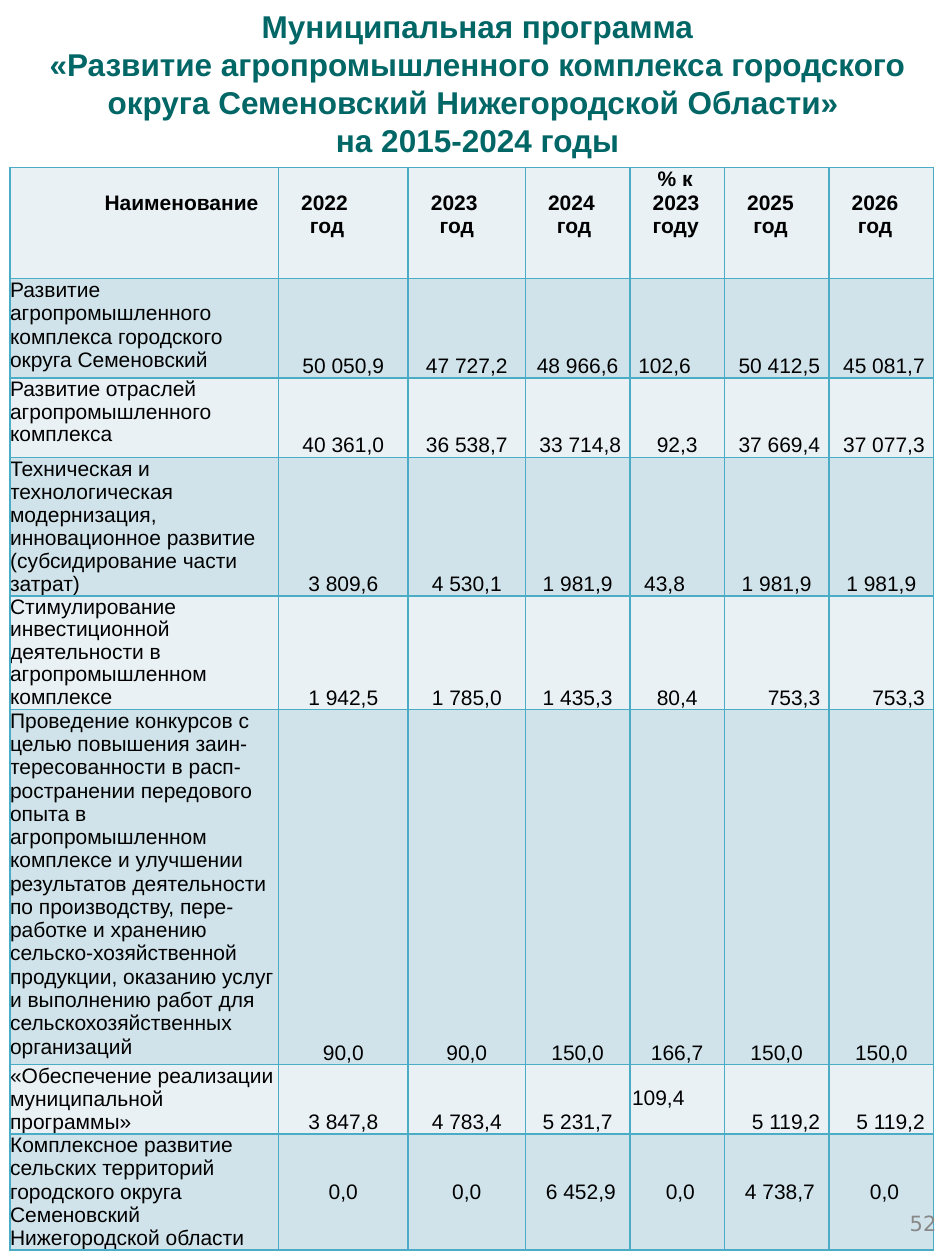
from lxml import etree
from pptx import Presentation
from pptx.dml.color import RGBColor
from pptx.enum.text import MSO_ANCHOR, PP_ALIGN
from pptx.oxml.ns import qn
from pptx.util import Inches, Pt

LEFT, CENTER, RIGHT = PP_ALIGN.LEFT, PP_ALIGN.CENTER, PP_ALIGN.RIGHT
TOP, MIDDLE, BOTTOM = MSO_ANCHOR.TOP, MSO_ANCHOR.MIDDLE, MSO_ANCHOR.BOTTOM

THEME = {
    "title": "006666", "text": "000000", "page": "888888", "border": "4BACC6",
    "light": "E9F1F5", "dark": "D0E3EA",
    "font": "Arial", "page_font": "DejaVu Sans",
    "title_size": 18, "body_size": 12, "border_width": 1,
}

TITLE = [
    ["Муниципальная программа",
     "«Развитие агропромышленного комплекса городского округа Семеновский Нижегородской Области» "],
    ["на 2015-2024 годы"],
]
PAGE_NUMBER = "52"

NAME_HEADING = "Наименование"
GROWTH_HEADING = "% к 2023 году"
YEARS = {1: "2022", 2: "2023", 3: "2024", 5: "2025", 6: "2026"}
GROWTH_COLUMN = 4

COLUMN_WIDTHS = [2.13, 1.03, 0.93, 0.83, 0.75, 0.83, 0.83]
HEADER_HEIGHT = 0.88

# name, row height, line spacing in points, values, one placement key per value
PROGRAMMES = [
    ("Развитие агропромышленного комплекса городского округа Семеновский", 0.79, 13.4,
     ["50 050,9", "47 727,2", "48 966,6", "102,6", "50 412,5", "45 081,7"], "cccsrr"),
    ("Развитие отраслей агропромышленного комплекса", 0.63, 13,
     ["40 361,0", "36 538,7", "33 714,8", "92,3", "37 669,4", "37 077,3"], "ccrcrr"),
    ("Техническая и технологическая модернизация, инновационное развитие "
     "(субсидирование части затрат)", 1.08, 13.2,
     ["3 809,6", "4 530,1", "1 981,9", "43,8", "1 981,9", "1 981,9"], "cccscc"),
    ("Стимулирование инвестиционной деятельности в агропромышленном комплексе", 0.9, 12.9,
     ["1 942,5", "1 785,0", "1 435,3", "80,4", "753,3", "753,3"], "ccccrr"),
    ("Проведение конкурсов с целью повышения заин-тересованности в расп-ространении "
     "передового опыта в агропромышленном комплексе и улучшении результатов деятельности "
     "по производству, пере-работке и хранению сельско-хозяйственной продукции, оказанию "
     "услуг и выполнению работ для сельскохозяйственных организаций", 2.82, 13.3,
     ["90,0", "90,0", "150,0", "166,7", "150,0", "150,0"], "cccccc"),
    ("«Обеспечение реализации муниципальной программы»", 0.55, 13.2,
     ["3 847,8", "4 783,4", "5 231,7", "109,4", "5 119,2", "5 119,2"], "cccurr"),
    ("Комплексное развитие сельских территорий городского округа Семеновский "
     "Нижегородской области", 0.86, 13.2,
     ["0,0", "0,0", "6 452,9", "0,0", "4 738,7", "0,0"], "mmnnnn"),
]

# alignment, anchor, margins (left, top, right, bottom)
PLACEMENTS = {
    "c": (CENTER, BOTTOM, (0, 0, 0, 0)),
    "s": (CENTER, BOTTOM, (0, 0, 0.2, 0)),
    "u": (CENTER, BOTTOM, (0, 0, 0.3, 0.19)),
    "r": (RIGHT, BOTTOM, (0.07, 0, 0.07, 0)),
    "m": (CENTER, MIDDLE, (0, 0, 0, 0)),
    "n": (CENTER, MIDDLE, (0.05, 0, 0, 0)),
}


def add_run(paragraph, text, size=THEME["body_size"], color=THEME["text"],
            font=THEME["font"], bold=False):
    run = paragraph.add_run()
    run.text = text
    run.font.size, run.font.name, run.font.bold = Pt(size), font, bold
    run.font.color.rgb = RGBColor.from_string(color)


def set_indent(paragraph, left, first_line=0):
    properties = paragraph._p.get_or_add_pPr()
    properties.set("marL", str(Inches(left)))
    properties.set("indent", str(Inches(first_line)))


def style_cell(cell, fill, anchor=TOP, margins=(0, 0, 0, 0)):
    cell.margin_left, cell.margin_top, cell.margin_right, cell.margin_bottom = map(Inches, margins)
    cell.vertical_anchor = anchor
    properties = cell._tc.get_or_add_tcPr()
    for side in ("a:lnL", "a:lnR", "a:lnT", "a:lnB"):
        line = etree.SubElement(properties, qn(side), w=str(Pt(THEME["border_width"])))
        solid = etree.SubElement(line, qn("a:solidFill"))
        etree.SubElement(solid, qn("a:srgbClr"), val=THEME["border"])
    cell.fill.solid()
    cell.fill.fore_color.rgb = RGBColor.from_string(fill)


def add_title(slide):
    frame = slide.shapes.add_textbox(Inches(0.04), Inches(0.01), Inches(7.5), Inches(1.31)).text_frame
    frame.word_wrap = True
    for index, lines in enumerate(TITLE):
        paragraph = frame.add_paragraph() if index else frame.paragraphs[0]
        paragraph.alignment = CENTER
        for number, line in enumerate(lines):
            if number:
                paragraph.add_line_break()
            add_run(paragraph, line, THEME["title_size"], THEME["title"], bold=True)


def fill_header(table):
    name = table.cell(0, 0)
    style_cell(name, THEME["light"], margins=(0, 0.19, 0, 0))
    set_indent(name.text_frame.paragraphs[0], 0.75)
    add_run(name.text_frame.paragraphs[0], NAME_HEADING, bold=True)

    for column, year in YEARS.items():
        cell = table.cell(0, column)
        style_cell(cell, THEME["light"], margins=(0, 0.19, 0, 0))
        frame = cell.text_frame
        word_indent = 0.25 if column < GROWTH_COLUMN else 0.23
        for paragraph, text, indent in ((frame.paragraphs[0], year, 0.18),
                                        (frame.add_paragraph(), "год", word_indent)):
            set_indent(paragraph, indent)
            paragraph.line_spacing = Pt(13.2)
            add_run(paragraph, text, bold=True)

    growth = table.cell(0, GROWTH_COLUMN)
    style_cell(growth, THEME["light"])
    set_indent(growth.text_frame.paragraphs[0], 0.18, 0.04)
    add_run(growth.text_frame.paragraphs[0], GROWTH_HEADING, bold=True)


def add_programme_table(slide):
    heights = [HEADER_HEIGHT] + [programme[1] for programme in PROGRAMMES]
    table = slide.shapes.add_table(
        len(heights), len(COLUMN_WIDTHS), Inches(0.08), Inches(1.33),
        Inches(sum(COLUMN_WIDTHS)), Inches(sum(heights))).table
    table.first_row = table.horz_banding = False
    for column, width in zip(table.columns, COLUMN_WIDTHS):
        column.width = Inches(width)
    for row, height in zip(table.rows, heights):
        row.height = Inches(height)

    fill_header(table)
    for row, (name, _, spacing, values, keys) in enumerate(PROGRAMMES, 1):
        fill = THEME["dark"] if row % 2 else THEME["light"]
        name_cell = table.cell(row, 0)
        style_cell(name_cell, fill)
        name_line = name_cell.text_frame.paragraphs[0]
        name_line.alignment, name_line.line_spacing = LEFT, Pt(spacing)
        add_run(name_line, name)
        for column, (value, key) in enumerate(zip(values, keys), 1):
            alignment, anchor, margins = PLACEMENTS[key]
            value_cell = table.cell(row, column)
            style_cell(value_cell, fill, anchor, margins)
            value_cell.text_frame.paragraphs[0].alignment = alignment
            add_run(value_cell.text_frame.paragraphs[0], value)


def add_page_number(slide):
    frame = slide.shapes.add_textbox(Inches(7.16), Inches(9.61), Inches(0.31), Inches(0.25)).text_frame
    frame.word_wrap = True
    frame.margin_left = frame.margin_top = frame.margin_right = frame.margin_bottom = 0
    set_indent(frame.paragraphs[0], 0.06)
    add_run(frame.paragraphs[0], PAGE_NUMBER, color=THEME["page"], font=THEME["page_font"])


def main():
    presentation = Presentation()
    presentation.slide_width, presentation.slide_height = Inches(7.5), Inches(10)
    slide = presentation.slides.add_slide(presentation.slide_layouts[6])
    add_programme_table(slide)
    add_title(slide)
    add_page_number(slide)
    presentation.save("out.pptx")


if __name__ == "__main__":
    main()
